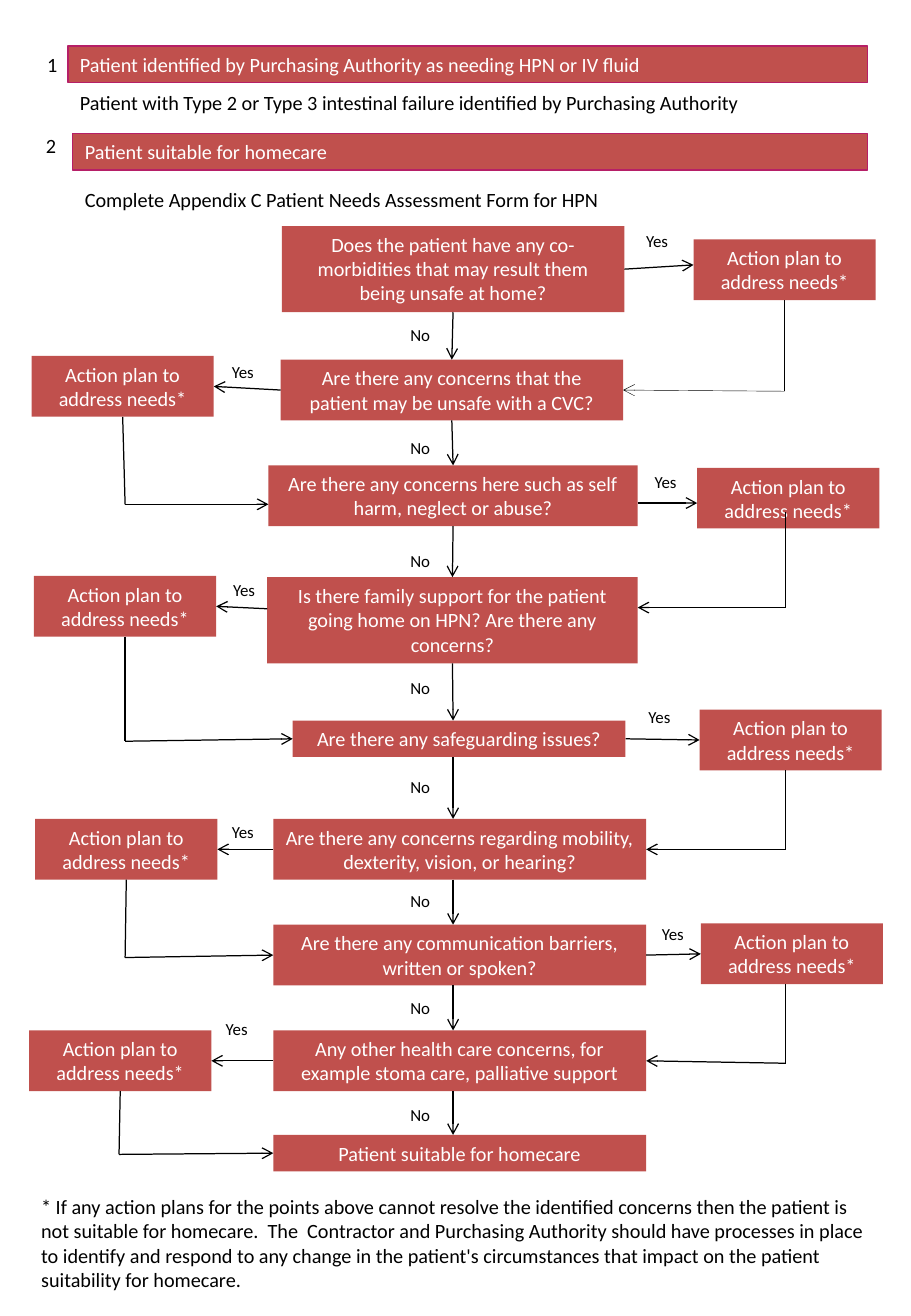
"""Build the homecare suitability flowchart for HPN patients."""
import collections
import dataclasses

import lxml.etree
import pptx
import pptx.dml.color
import pptx.enum.shapes
import pptx.enum.text
import pptx.oxml.ns
import pptx.util

Inches = pptx.util.Inches
MSO_SHAPE = pptx.enum.shapes.MSO_SHAPE
ALIGN = pptx.enum.text.PP_ALIGN


@dataclasses.dataclass(frozen=True)
class Theme:
    font: str = "Calibri"
    body: int = 12
    label: int = 10
    box: str = "C0504D"
    border: str = "B61F67"
    ink: str = "000000"
    paper: str = "FFFFFF"
    stroke: float = 0.75
    hairline: float = 0.25


theme = Theme()
rgb = pptx.dml.color.RGBColor.from_string
prs = pptx.Presentation()
prs.slide_width, prs.slide_height = Inches(7.5), Inches(10.83)
s = prs.slides.add_slide(prs.slide_layouts[6])


def add_text(text, left, top, width, height, fill=None, border=None,
             align=ALIGN.LEFT, size=theme.body, wrap=True):
    at = [Inches(v) for v in (left, top, width, height)]
    if fill:
        sp = s.shapes.add_shape(MSO_SHAPE.RECTANGLE, *at)
        sp.shadow.inherit = False
        sp.fill.solid()
        sp.fill.fore_color.rgb = rgb(fill)
        if border:
            sp.line.color.rgb = rgb(border)
            sp.line.width = pptx.util.Pt(theme.stroke)
        else:
            sp.line.fill.background()
    else:
        sp = s.shapes.add_textbox(*at)
    tf = sp.text_frame
    tf.word_wrap = wrap
    tf.auto_size = pptx.enum.text.MSO_AUTO_SIZE.SHAPE_TO_FIT_TEXT
    tf.vertical_anchor = pptx.enum.text.MSO_ANCHOR.TOP
    p = tf.paragraphs[0]
    p.alignment = align
    r = p.add_run()
    r.text = text
    r.font.name, r.font.size = theme.font, pptx.util.Pt(size)
    r.font.color.rgb = rgb(theme.paper if fill else theme.ink)
    return sp


def add_line(start, end, source=None, target=None, arrow=True, weight=theme.stroke):
    line = s.shapes.add_connector(pptx.enum.shapes.MSO_CONNECTOR.STRAIGHT,
                                  *[Inches(v) for v in (*start, *end)])
    line.line.color.rgb = rgb(theme.ink)
    line.line.width = pptx.util.Pt(weight)
    for join, point, anchor in ((line.begin_connect, start, source),
                                (line.end_connect, end, target)):
        if anchor:
            sp, site = anchor
            x = sp.left + sp.width * (0.5, 0, 0.5, 1)[site]
            y = sp.top + sp.height * (0, 0.5, 1, 0.5)[site]
            if max(abs(x - Inches(point[0])), abs(y - Inches(point[1]))) <= Inches(0.035):
                join(sp, site)
    qn = pptx.oxml.ns.qn
    if arrow:
        ln = line.line._get_or_add_ln()
        lxml.etree.SubElement(ln, qn("a:tailEnd"), type="arrow")
    lxml.etree.SubElement(line._element.spPr, qn("a:effectLst"))


add_text("Patient identified by Purchasing Authority as needing HPN or IV fluid",
         0.56, 0.38, 6.58, 0.3, theme.box, theme.border)
add_text("Patient suitable for homecare", 0.6, 1.1, 6.54, 0.3, theme.box, theme.border)
for number, left, top in (("1", 0.29, 0.38), ("2", 0.28, 1.05)):
    add_text(number, left, top, 0.29, 0.3, wrap=False)
add_text("Patient with Type 2 or Type 3 intestinal failure identified by Purchasing Authority",
         0.56, 0.69, 6.5, 0.3)
add_text("Complete Appendix C Patient Needs Assessment Form for HPN", 0.6, 1.49, 6.5, 0.3)

Step = collections.namedtuple(
    "Step", "text left top width height plan_left plan_top yes_x yes_y yes_line no_y "
            "drop_x drop_top return_y return_tip")
steps = [
    Step("Does the patient have any co-morbidities that may result them being unsafe at home?",
         2.32, 1.86, 2.82, 0.71, 5.71, 1.97, 5.22, 1.85, 2.18, 2.62, 6.46, 2.47, 3.22, 5.13),
    Step("Are there any concerns that the patient may be unsafe with a CVC?",
         2.31, 2.96, 2.82, 0.5, 0.26, 2.93, 1.81, 2.93, 3.2, 3.55, 1.03, 3.43, 4.15, 2.21),
    Step("Are there any concerns here such as self harm, neglect or abuse?",
         2.21, 3.83, 3.04, 0.5, 5.74, 3.85, 5.29, 3.83, 4.14, 4.48, 6.47, 4.21, 5, 5.25),
    Step("Is there family support for the patient going home on HPN? Are there any concerns?",
         2.2, 4.75, 3.05, 0.71, 0.28, 4.74, 1.82, 4.72, 5.01, 5.53, 1.03, 5.24, 6.1, 2.39),
    Step("Are there any safeguarding issues?",
         2.41, 5.93, 2.74, 0.3, 5.76, 5.84, 5.24, 5.77, 6.08, 6.34, 6.47, 6.34, 6.99, 5.32),
    Step("Are there any concerns regarding mobility, dexterity, vision, or hearing?",
         2.25, 6.74, 3.07, 0.5, 0.29, 6.74, 1.81, 6.71, 7.02, 7.28, 1.03, 7.24, 7.88, 2.27),
    Step("Are there any communication barriers, written or spoken?",
         2.25, 7.61, 3.07, 0.5, 5.77, 7.6, 5.35, 7.55, 7.87, 8.16, 6.47, 8.1, 8.75, 5.33),
    Step("Any other health care concerns, for example stoma care, palliative support",
         2.25, 8.48, 3.07, 0.5, 0.24, 8.48, 1.76, 8.33, 8.72, 9.04, 0.98, 8.98, 9.5, 2.23),
]
plan_width, plan_height, spine_x = 1.5, 0.5, 3.73

questions = [add_text(step.text, step.left, step.top, step.width, step.height,
                      theme.box, align=ALIGN.CENTER) for step in steps]
questions.append(add_text("Patient suitable for homecare", 2.25, 9.34, 3.07, 0.3,
                          theme.box, align=ALIGN.CENTER))

for i, step in enumerate(steps):
    question, following = questions[i], questions[i + 1]
    plan = add_text("Action plan to address needs*", step.plan_left, step.plan_top,
                    plan_width, plan_height, theme.box, align=ALIGN.CENTER)
    add_text("Yes", step.yes_x, step.yes_y, 0.39, 0.27, size=theme.label, wrap=False)
    add_text("No", 3.28, step.no_y, 0.37, 0.27, size=theme.label, wrap=False)

    to_right = step.plan_left > step.left
    near, far = (3, 1) if to_right else (1, 3)
    yes_start = step.left + (step.width if to_right else 0)
    yes_end = step.plan_left + (0 if to_right else plan_width)
    add_line((yes_start, step.yes_line), (yes_end, step.yes_line),
             (question, near), (plan, far))
    add_line((spine_x, step.top + step.height), (spine_x, following.top / Inches(1)),
             (question, 2), (following, 0))
    corner = (step.drop_x, step.return_y)
    add_line((step.drop_x, step.drop_top), corner, (plan, 2), arrow=False)
    add_line(corner, (step.return_tip, step.return_y), target=(following, near),
             weight=theme.stroke if i else theme.hairline)

add_text("* If any action plans for the points above cannot resolve the identified concerns "
         "then the patient is not suitable for homecare.  The  Contractor and Purchasing "
         "Authority should have processes in place to identify and respond to any change in "
         "the patient's circumstances that impact on the patient suitability for homecare.",
         0.24, 9.78, 7.05, 0.91)

prs.save("out.pptx")
